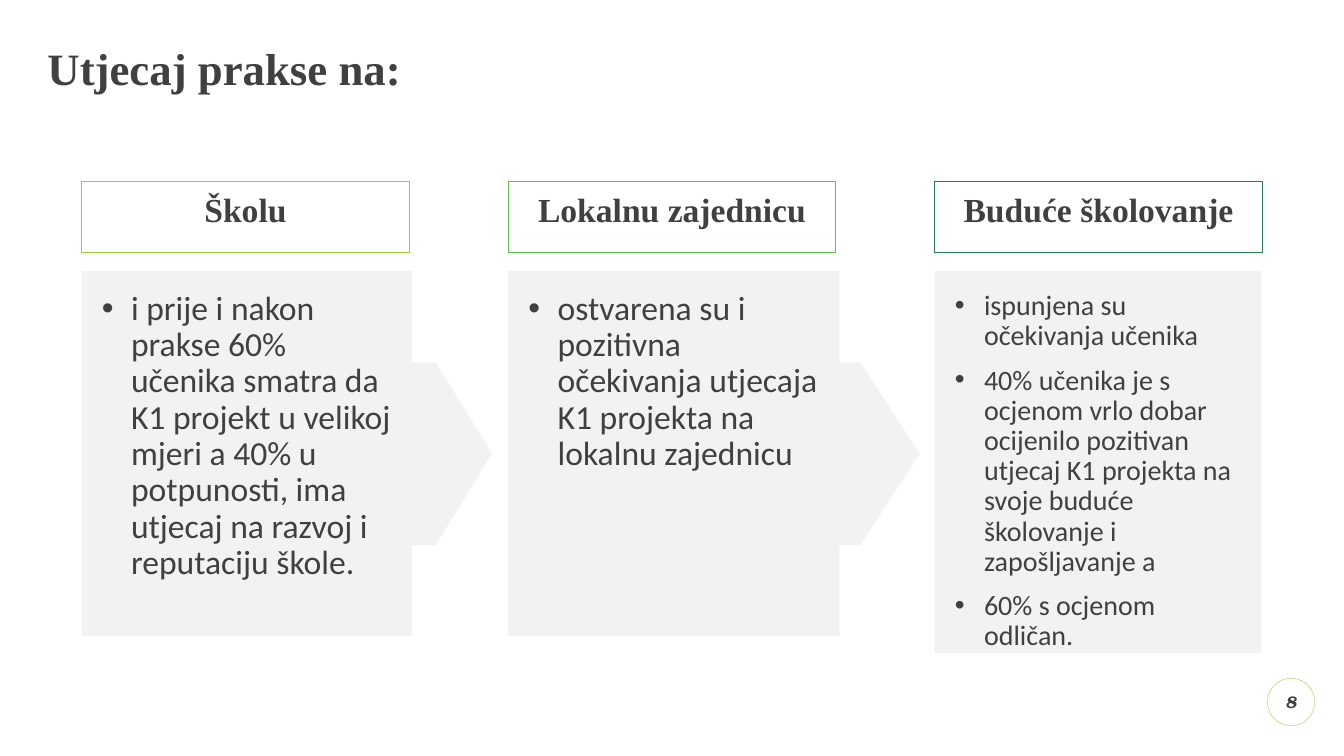
from lxml import etree
from pptx import Presentation
from pptx.dml.color import RGBColor
from pptx.enum.shapes import MSO_SHAPE
from pptx.enum.text import MSO_ANCHOR, PP_ALIGN
from pptx.oxml.ns import qn
from pptx.util import Inches, Pt

RECT = MSO_SHAPE.RECTANGLE
CALLOUT = MSO_SHAPE.RIGHT_ARROW_CALLOUT
OVAL = MSO_SHAPE.OVAL
LEFT, CENTER = PP_ALIGN.LEFT, PP_ALIGN.CENTER
TOP, MIDDLE = MSO_ANCHOR.TOP, MSO_ANCHOR.MIDDLE

SERIF, SANS, BADGE = "Times New Roman", "Calibri", "TeX Gyre Bonum"
INK, PANEL, LIME = "404040", "F2F2F2", "9ACB39"
START, PITCH = 0.81, 4.23
INDENT = 0.29

# Heading, outline, panel width, arrow head ratio, text size, points
COLUMNS = [
    ("Školu", LIME, 4.07, 0.154, 24,
     ["i prije i nakon prakse 60% učenika smatra da K1 projekt u velikoj "
      "mjeri a 40% u potpunosti, ima utjecaj na razvoj i reputaciju škole."]),
    ("Lokalnu zajednicu", "64C24A", 4.08, 0.162, 24,
     ["ostvarena su i pozitivna očekivanja utjecaja K1 projekta na "
      "lokalnu zajednicu"]),
    ("Buduće školovanje", "297D53", 3.24, None, 20,
     ["ispunjena su očekivanja učenika",
      "40% učenika je s ocjenom vrlo dobar ocijenilo pozitivan utjecaj K1 "
      "projekta na svoje buduće školovanje i zapošljavanje a",
      "60% s ocjenom odličan."]),
]


def color(code):
    return RGBColor.from_string(code)


def add_box(slide, kind, box, fill=None, line=None, weight=0.75):
    shape = slide.shapes.add_shape(kind, *map(Inches, box))
    shape.shadow.inherit = False
    if fill:
        shape.fill.solid()
        shape.fill.fore_color.rgb = color(fill)
    else:
        shape.fill.background()
    if line:
        shape.line.color.rgb = color(line)
        shape.line.width = Pt(weight)
    else:
        shape.line.fill.background()
    return shape


def write(shape, lines, size, face, align=LEFT, anchor=TOP, inset=(0, 0, 0, 0),
          bold=False, italic=False, spacing=0.9, before=0):
    frame = shape.text_frame
    frame.text = "\n".join(lines)
    frame.word_wrap = True
    frame.vertical_anchor = anchor
    (frame.margin_left, frame.margin_top,
     frame.margin_right, frame.margin_bottom) = map(Inches, inset)
    for para in frame.paragraphs:
        para.alignment = align
        para.line_spacing = spacing
        para.space_before = Pt(before)
        for run in para.runs:
            font = run.font
            font.size, font.name = Pt(size), face
            font.bold, font.italic = bold, italic
            font.color.rgb = color(INK)


def add_bullets(shape):
    for para in shape.text_frame.paragraphs:
        props = para._p.get_or_add_pPr()
        props.set("marL", str(Inches(INDENT)))
        props.set("indent", str(-Inches(INDENT)))
        etree.SubElement(props, qn("a:buFont")).set("typeface", "Arial")
        etree.SubElement(props, qn("a:buChar")).set("char", "•")


def add_title(slide, box):
    title = slide.shapes.title
    title.left, title.top, title.width, title.height = map(Inches, box)
    write(title, ["Utjecaj prakse na:"], 32, SERIF, anchor=MIDDLE, bold=True)


def add_column(slide, left, top, column):
    name, line, width, head, size, points = column
    # Heading
    label = add_box(slide, RECT, (left, top, 3.25, 0.71), line=line)
    write(label, [name], 24, SERIF, CENTER, inset=(0, 0.12, 0, 0),
          bold=True, before=10)
    # Panel, with an arrow towards the next column
    kind, height = (CALLOUT, 3.62) if head else (RECT, 3.79)
    panel = add_box(slide, kind, (left, top + 0.89, width, height), fill=PANEL)
    if head:
        for i, ratio in enumerate((0.5, 0.25, head, 0.805)):
            panel.adjustments[i] = ratio
    write(panel, points, size, SANS, inset=(0.2, 0.2, 0.2, 0), before=10)
    add_bullets(panel)


def add_number(slide, box):
    badge = add_box(slide, OVAL, box, line=LIME, weight=0.25)
    write(badge, ["8"], 12, BADGE, CENTER, MIDDLE, bold=True, italic=True,
          spacing=1.0)


def main():
    deck = Presentation()
    deck.slide_width, deck.slide_height = Inches(13.33), Inches(7.5)
    slide = deck.slides.add_slide(deck.slide_layouts[5])
    add_title(slide, (0.47, 0.47, 12.4, 0.47))
    for i, column in enumerate(COLUMNS):
        add_column(slide, START + i * PITCH, 1.8, column)
    add_number(slide, (12.57, 6.73, 0.47, 0.47))
    deck.save("out.pptx")


if __name__ == "__main__":
    main()
